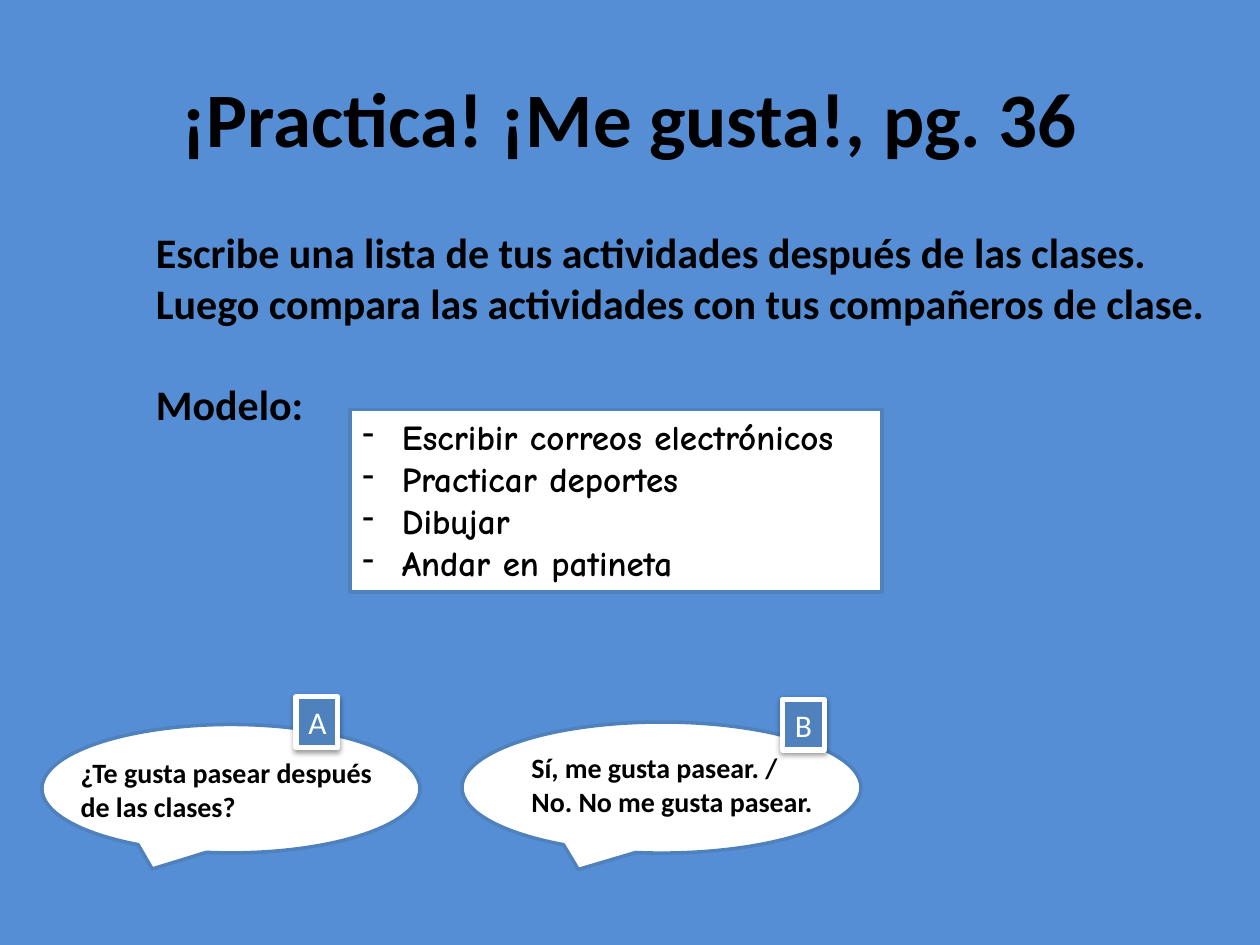
"""Builds the "¡Practica! ¡Me gusta!" class activity slide."""
from lxml.etree import SubElement
from pptx import Presentation
from pptx.dml.color import RGBColor
from pptx.enum.shapes import MSO_SHAPE
from pptx.enum.text import MSO_ANCHOR, PP_ALIGN
from pptx.oxml.ns import qn
from pptx.util import Pt

COLORS = {"background": "558ED5", "accent": "4F81BD", "paper": "FFFFFF", "ink": "000000"}


def color(name):
    return RGBColor.from_string(COLORS[name])


def write(frame, lines, size, font="Calibri", ink="ink", bold=True):
    frame.word_wrap = True
    for index, line in enumerate(lines):
        paragraph = frame.paragraphs[0] if index == 0 else frame.add_paragraph()
        paragraph.text = line
        paragraph.alignment = PP_ALIGN.LEFT
        paragraph.font.size = Pt(size)
        paragraph.font.name = font
        paragraph.font.bold = bold
        paragraph.font.color.rgb = color(ink)
    return frame.paragraphs


def add_text(slide, box, lines, size):
    frame = slide.shapes.add_textbox(*map(Pt, box)).text_frame
    return frame, write(frame, lines, size)


def add_panel(slide, kind, box, fill="paper", line="accent", width=2):
    panel = slide.shapes.add_shape(kind, *map(Pt, box))
    panel.shadow.inherit = False
    panel.fill.solid()
    panel.fill.fore_color.rgb = color(fill)
    panel.line.color.rgb = color(line)
    panel.line.width = Pt(width)
    panel.text_frame.vertical_anchor = MSO_ANCHOR.TOP
    return panel


def add_badge(slide, left, top, letter):
    badge = add_panel(slide, MSO_SHAPE.RECTANGLE, (left, top, 23.8, 29), "accent", "paper", 3)
    write(badge.text_frame, [letter], 18, ink="paper", bold=False)
    effects = badge._element.spPr.find(qn("a:effectLst"))
    shadow = SubElement(effects, qn("a:outerShdw"), blurRad=str(Pt(3.1)), dist=str(Pt(1.6)),
                        dir="5400000", rotWithShape="0")
    tint = SubElement(shadow, qn("a:srgbClr"), val=COLORS["ink"])
    SubElement(tint, qn("a:alpha"), val="38000")


def add_dash(paragraph, indent):
    properties = paragraph._p.get_or_add_pPr()
    properties.set("marL", str(Pt(indent)))
    properties.set("indent", str(-Pt(indent)))
    dash = properties.makeelement(qn("a:buChar"), {"char": "-"})
    properties.insert(0, dash)


def add_activity_list(slide, activities):
    card = add_panel(slide, MSO_SHAPE.RECTANGLE, (200, 234, 304, 104.4))
    for activity in write(card.text_frame, activities, 20, "Comic Neue"):
        add_dash(activity, 22.5)


def add_speech(slide, bubble, words, lines):
    add_panel(slide, MSO_SHAPE.OVAL_CALLOUT, bubble)
    add_text(slide, words, lines, 16)


def main():
    presentation = Presentation()
    presentation.slide_width, presentation.slide_height = Pt(720), Pt(540)
    slide = presentation.slides.add_slide(presentation.slide_layouts[6])
    slide.background.fill.solid()
    slide.background.fill.fore_color.rgb = color("background")

    heading, heading_lines = add_text(slide, (36, 21.6, 648, 90),
                                      ["¡Practica! ¡Me gusta!, pg. 36"], 44)
    heading.vertical_anchor = MSO_ANCHOR.MIDDLE
    heading_lines[0].alignment = PP_ALIGN.CENTER

    _, (_, model_label) = add_text(slide, (82, 126, 613.5, 349), [
        "Escribe una lista de tus actividades después de las clases. "
        "Luego compara las actividades con tus compañeros de clase.",
        "Modelo:"], 24)
    model_label.space_before = Pt(29)

    add_speech(slide, (24, 414, 216, 73.4), (39, 428.4, 186.5, 46),
               ["¿Te gusta pasear después de las clases?"])
    add_speech(slide, (264, 412.6, 228, 74.9), (296.6, 425.5, 180.7, 46),
               ["Sí, me gusta pasear. /", "No. No me gusta pasear."])
    add_badge(slide, 169.2, 398.2, "A")
    add_badge(slide, 447.2, 399.6, "B")
    add_activity_list(slide, ["Escribir correos electrónicos", "Practicar deportes",
                              "Dibujar", "Andar en patineta"])
    presentation.save("out.pptx")


if __name__ == "__main__":
    main()
